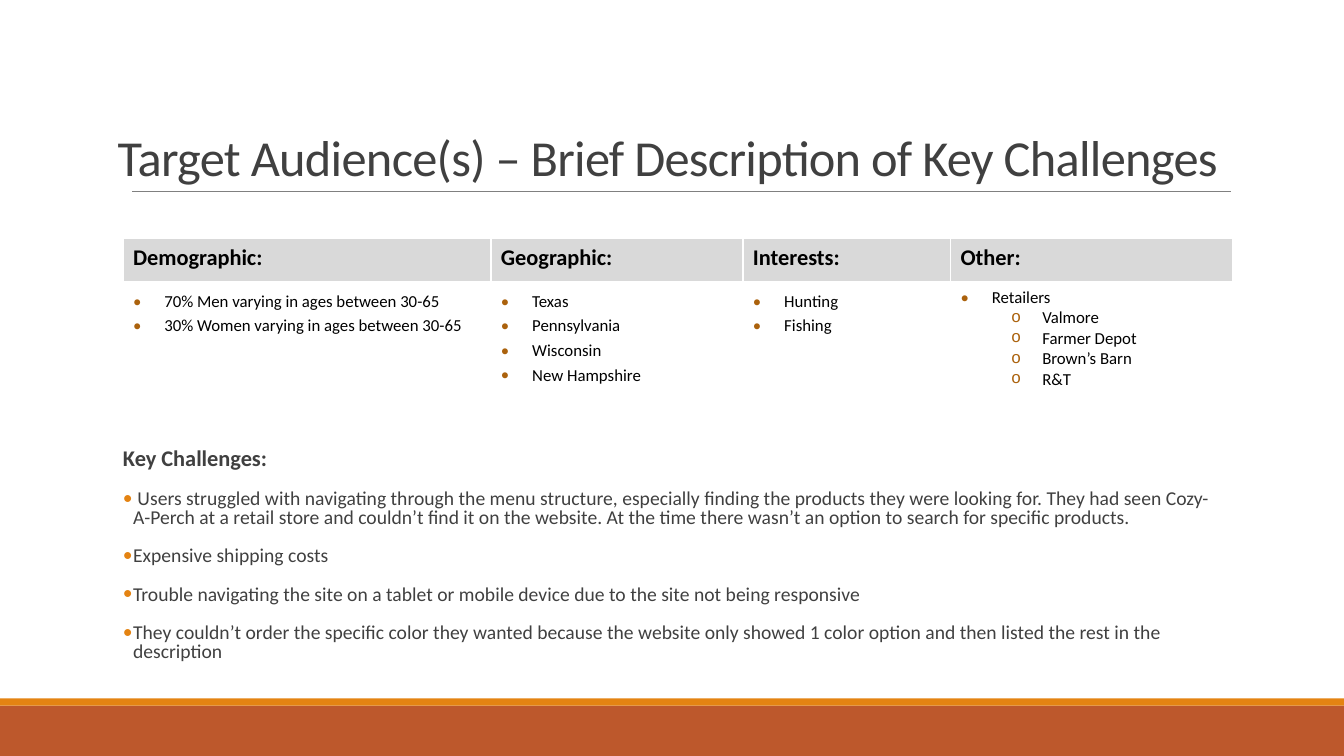
from pptx import Presentation
from pptx.dml.color import RGBColor as RGB
from pptx.enum.shapes import MSO_CONNECTOR as Line, MSO_SHAPE as Shape
from pptx.enum.text import MSO_ANCHOR as Anchor
from pptx.oxml.ns import qn
from pptx.util import Inches, Pt
from lxml.etree import SubElement as Sub

RUST = RGB(0xBD, 0x58, 0x2C)
AMBER = RGB(0xE4, 0x83, 0x12)
BROWN = RGB(0xAB, 0x62, 0x0D)
DARK = RGB(0x40, 0x40, 0x40)
GRAY = RGB(0x80, 0x80, 0x80)
PALE = RGB(0xD9, 0xD9, 0xD9)
BLACK = RGB(0, 0, 0)
WHITE = RGB(0xFF, 0xFF, 0xFF)

# Grid of tenth-inch cells: 133.33 columns by 75 rows
CELL = Inches(0.1)
COLS, ROWS = 133.33, 75


def grid(*cells):
    return [round(n * CELL) for n in cells]


def style(para, text, size, color, bold=False, mark=None, tint=None, left=0, hang=0):
    """Fill a paragraph, with a hanging bullet if mark is given."""
    para.text = text
    font = para.font
    font.name, font.size, font.bold = "Calibri", Pt(size), bold
    font.color.rgb = color
    if mark:
        props = para._p.get_or_add_pPr()
        props.set("marL", str(round(left * CELL)))
        props.set("indent", str(round(-hang * CELL)))
        # Bullet parts go after spacing and before the default run style
        at = props.find(qn("a:defRPr"))
        hue = Sub(props, qn("a:buClr"))
        Sub(hue, qn("a:srgbClr"), val=str(tint))
        face = Sub(props, qn("a:buFont"), typeface="Courier New" if mark == "o" else "Calibri")
        dot = Sub(props, qn("a:buChar"), char=mark)
        for part in (hue, face, dot):
            at.addprevious(part)


deck = Presentation()
deck.slide_width, deck.slide_height = grid(COLS, ROWS)
slide = deck.slides.add_slide(deck.slide_layouts[6])
shapes = slide.shapes

# Footer bands
for top, high, color in ((70, 5, RUST), (69.3, 0.7, AMBER)):
    band = shapes.add_shape(Shape.RECTANGLE, *grid(0, top, COLS, high))
    band.shadow.inherit = False
    band.fill.solid()
    band.fill.fore_color.rgb = color
    band.line.fill.background()

# Rule under the title
rule = shapes.add_connector(Line.STRAIGHT, *grid(13.1, 19, 122.1, 19))
rule.line.color.rgb = GRAY
rule.line.width = Pt(0.5)
Sub(rule._element.spPr, qn("a:effectLst"))

# Title
frame = shapes.add_textbox(*grid(10.7, 3.1, 111.7, 15.9)).text_frame
frame.word_wrap = True
frame.vertical_anchor = Anchor.BOTTOM
title = frame.paragraphs[0]
style(title, "Target Audience(s) – Brief Description of Key Challenges", 36, DARK)
title.line_spacing = 0.85
title.runs[0].font._element.set("spc", "-50")

# Key challenges
frame = shapes.add_textbox(*grid(12.2, 40.3, 109.2, 27.2)).text_frame
frame.word_wrap = True
frame.margin_left = frame.margin_right = 0
frame.margin_top = round(4.3 * CELL)
items = [
    " Users struggled with navigating through the menu structure, especially finding the products "
    "they were looking for. They had seen Cozy-A-Perch at a retail store and couldn’t find it on "
    "the website. At the time there wasn’t an option to search for specific products.",
    "Expensive shipping costs",
    "Trouble navigating the site on a tablet or mobile device due to the site not being responsive",
    "They couldn’t order the specific color they wanted because the website only showed 1 color "
    "option and then listed the rest in the description",
]
head = frame.paragraphs[0]
style(head, "Key Challenges:", 16, DARK, True)
for item in items:
    style(frame.add_paragraph(), item, 14, DARK, False, "•", AMBER, 1, 1)
for para in frame.paragraphs:
    para.line_spacing = 0.8
    para.space_before, para.space_after = Pt(12), Pt(2)
head.space_before = Pt(0)

# Audience table: heading, width, bullets, sub-bullets, line spacing
groups = [
    ("Demographic:", 36.5, ["70% Men varying in ages between 30-65",
                            "30% Women varying in ages between 30-65"], [], 1.2),
    ("Geographic:", 25, ["Texas", "Pennsylvania", "Wisconsin", "New Hampshire"], [], 1.2),
    ("Interests:", 20.6, ["Hunting", "Fishing"], [], 1.2),
    ("Other:", 28, ["Retailers"], ["Valmore", "Farmer Depot", "Brown’s Barn", "R&T"], 1),
]
table = shapes.add_table(2, len(groups), *grid(12.2, 23.7, 110, 17)).table
table.rows[0].height, table.rows[1].height = grid(4.3, 12.7)
for i, (name, wide, main, subs, gap) in enumerate(groups):
    table.columns[i].width = round(wide * CELL)
    top, body = table.cell(0, i), table.cell(1, i)
    style(top.text_frame.paragraphs[0], name, 16, BLACK, True)
    lines = [(text, "•", 3.1) for text in main] + [(text, "o", 8.1) for text in subs]
    frame = body.text_frame
    for n, (text, mark, left) in enumerate(lines):
        para = frame.add_paragraph() if n else frame.paragraphs[0]
        para.line_spacing = gap
        para.level = int(mark == "o")
        style(para, text, 12, BLACK, False, mark, BROWN, left, 3.1)
    # White edge below the heading, then the fills
    edge = Sub(top._tc.get_or_add_tcPr(), qn("a:lnB"), w=str(Pt(2)))
    Sub(Sub(edge, qn("a:solidFill")), qn("a:srgbClr"), val=str(WHITE))
    for cell, color in ((top, PALE), (body, WHITE)):
        cell.fill.solid()
        cell.fill.fore_color.rgb = color

deck.save("out.pptx")
